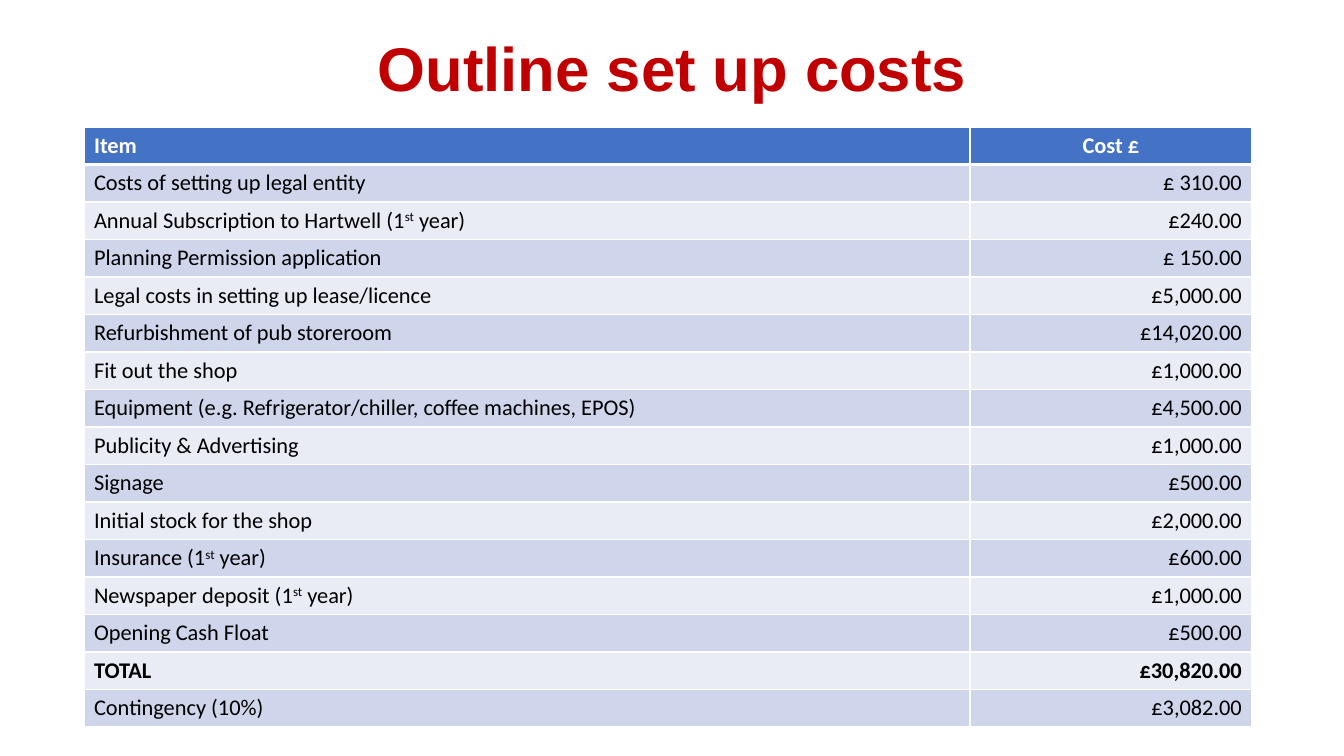
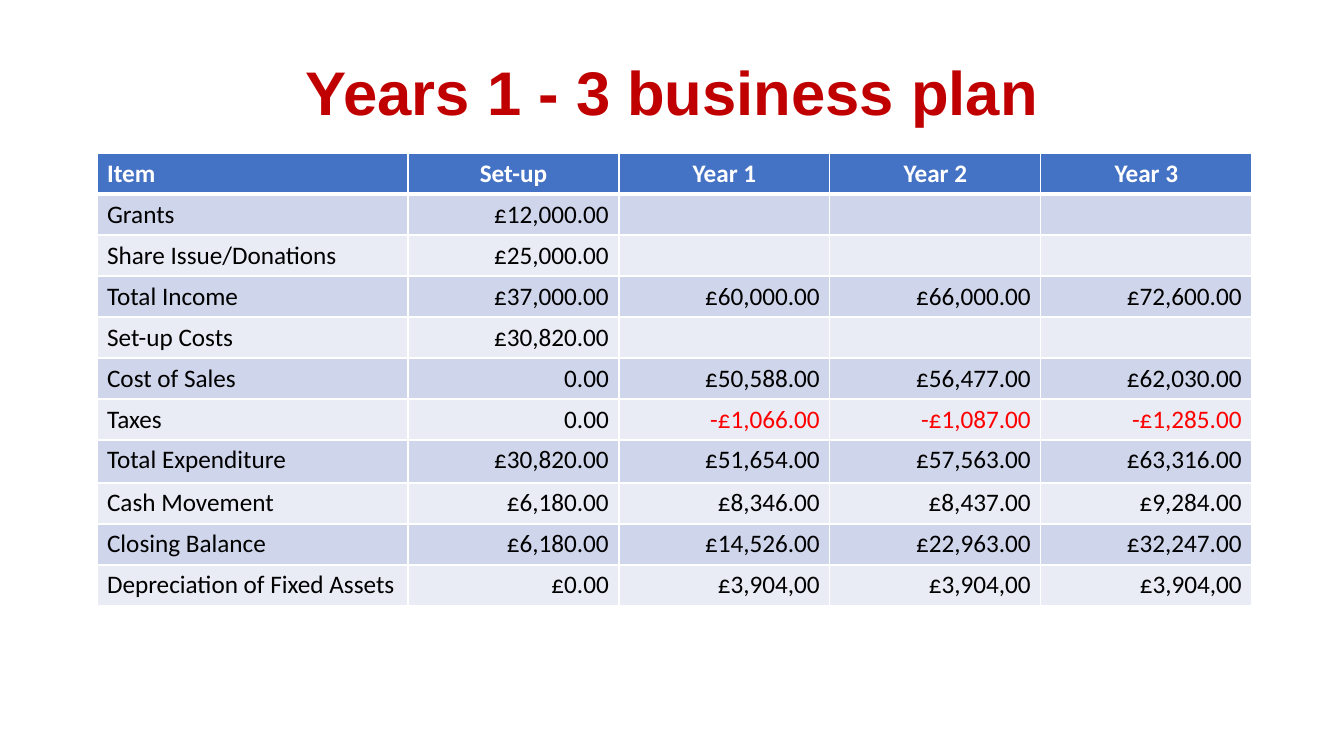
from dataclasses import dataclass

from lxml.etree import SubElement
from pptx import Presentation
from pptx.dml.color import RGBColor
from pptx.enum.text import MSO_ANCHOR as Anchor, MSO_AUTO_SIZE as AutoSize, PP_ALIGN as Align
from pptx.oxml.ns import qn
from pptx.presentation import Presentation as Deck
from pptx.shapes.autoshape import Shape
from pptx.table import _Cell as Cell
from pptx.util import Emu, Pt

PX_PER_INCH = 100.8
SLIDE_SIZE = (1344, 756)
TITLE_LEFT, TITLE_WIDTH, TITLE_HEIGHT = 93, 1159, 111
TITLE_FONT, TABLE_FONT = "Arial", "Calibri"

WHITE = RGBColor(0xFF, 0xFF, 0xFF)
BLACK = RGBColor(0x00, 0x00, 0x00)
TITLE_RED = RGBColor(0xC0, 0x00, 0x00)
NEGATIVE_RED = RGBColor(0xFF, 0x00, 0x00)
HEADER_BLUE = RGBColor(0x44, 0x72, 0xC4)
BANDS = (RGBColor(0xE9, 0xEB, 0xF5), RGBColor(0xCF, 0xD5, 0xEA))

THIN, THICK = Pt(1), Pt(3)
TOTAL_LABEL = "TOTAL"


@dataclass(frozen=True)
class TablePage:
    title: str
    title_top: int
    left: int
    top: int
    columns: tuple[int, ...]
    row_heights: tuple[int, ...]
    text_size: int
    rows: tuple[tuple[str, ...], ...]


SETUP_COSTS = TablePage(
    title="Outline set up costs",
    title_top=16,
    left=84,
    top=127,
    columns=(886, 282),
    row_heights=(37,) * 16,
    text_size=16,
    rows=(
        ("Item", "Cost £"),
        ("Costs of setting up legal entity", "£ 310.00"),
        ("Annual Subscription to Hartwell (1^st^ year)", "£240.00"),
        ("Planning Permission application", "£ 150.00"),
        ("Legal costs in setting up lease/licence", "£5,000.00"),
        ("Refurbishment of pub storeroom", "£14,020.00"),
        ("Fit out the shop", "£1,000.00"),
        ("Equipment (e.g. Refrigerator/chiller, coffee machines, EPOS)", "£4,500.00"),
        ("Publicity & Advertising", "£1,000.00"),
        ("Signage", "£500.00"),
        ("Initial stock for the shop", "£2,000.00"),
        ("Insurance (1^st^ year)", "£600.00"),
        ("Newspaper deposit (1^st^ year)", "£1,000.00"),
        ("Opening Cash Float", "£500.00"),
        (TOTAL_LABEL, "£30,820.00"),
        ("Contingency (10%)", "£3,082.00"),
    ),
)

BUSINESS_PLAN = TablePage(
    title="Years 1 - 3 business plan",
    title_top=40,
    left=97,
    top=153,
    columns=(311,) + (211,) * 4,
    row_heights=(41,) * 7 + (43,) + (41,) * 3,
    text_size=18,
    rows=(
        ("Item", "Set-up", "Year 1", "Year 2", "Year 3"),
        ("Grants", "£12,000.00", "", "", ""),
        ("Share Issue/Donations", "£25,000.00", "", "", ""),
        ("Total Income", "£37,000.00", "£60,000.00", "£66,000.00", "£72,600.00"),
        ("Set-up Costs", "£30,820.00", "", "", ""),
        ("Cost of Sales", "0.00", "£50,588.00", "£56,477.00", "£62,030.00"),
        ("Taxes", "0.00", "-£1,066.00", "-£1,087.00", "-£1,285.00"),
        ("Total Expenditure", "£30,820.00", "£51,654.00", "£57,563.00", "£63,316.00"),
        ("Cash Movement", "£6,180.00", "£8,346.00", "£8,437.00", "£9,284.00"),
        ("Closing Balance", "£6,180.00", "£14,526.00", "£22,963.00", "£32,247.00"),
        ("Depreciation of Fixed Assets", "£0.00", "£3,904,00", "£3,904,00", "£3,904,00"),
    ),
)


def px(length: int) -> Emu:
    return Emu(round(length * 914400 / PX_PER_INCH))


def format_title(title: Shape, text: str, top: int) -> None:
    title.left, title.top = px(TITLE_LEFT), px(top)
    title.width, title.height = px(TITLE_WIDTH), px(TITLE_HEIGHT)
    frame = title.text_frame
    frame.text = text
    frame.word_wrap = True
    frame.auto_size = AutoSize.NONE
    frame.vertical_anchor = Anchor.MIDDLE
    para = frame.paragraphs[0]
    para.alignment = Align.CENTER
    para.line_spacing = 0.9
    font = para.runs[0].font
    font.name, font.size, font.bold = TITLE_FONT, Pt(44), True
    font.color.rgb = TITLE_RED


def set_borders(cell: Cell, top: Pt, bottom: Pt) -> None:
    properties = cell._tc.get_or_add_tcPr()
    widths = {"a:lnL": THIN, "a:lnR": THIN, "a:lnT": top, "a:lnB": bottom}
    for position, (side, width) in enumerate(widths.items()):
        line = SubElement(properties, qn(side), w=str(width))
        fill = SubElement(line, qn("a:solidFill"))
        SubElement(fill, qn("a:srgbClr"), val=str(WHITE))
        properties.insert(position, line)


def write_cell(cell: Cell, text: str, size: int, color: RGBColor, bold: bool, align: Align) -> None:
    """Write the text, raising the parts between carets."""
    para = cell.text_frame.paragraphs[0]
    para.alignment = align
    para.font.size = Pt(size)
    for index, part in enumerate(text.split("^") if text else ()):
        span = para.add_run()
        span.text = part
        font = span.font
        font.name, font.size, font.bold = TABLE_FONT, Pt(size), bold
        font.color.rgb = color
        if index % 2:
            span._r.get_or_add_rPr().set("baseline", "30000")


def format_cell(cell: Cell, text: str, row: int, column: int, is_total: bool, size: int) -> None:
    is_header = row == 0
    cell.fill.solid()
    cell.fill.fore_color.rgb = HEADER_BLUE if is_header else BANDS[row % 2]
    set_borders(cell, THICK if row == 1 else THIN, THICK if is_header else THIN)
    if is_header:
        color = WHITE
    else:
        color = NEGATIVE_RED if text.startswith("-") else BLACK
    if column == 0:
        align = Align.LEFT
    else:
        align = Align.CENTER if is_header else Align.RIGHT
    write_cell(cell, text, size, color, is_header or is_total, align)


def add_table_page(deck: Deck, page: TablePage) -> None:
    slide = deck.slides.add_slide(deck.slide_layouts[5])
    format_title(slide.shapes.title, page.title, page.title_top)
    table = slide.shapes.add_table(
        len(page.rows), len(page.columns), px(page.left), px(page.top),
        px(sum(page.columns)), px(sum(page.row_heights)),
    ).table
    for column, width in zip(table.columns, page.columns):
        column.width = px(width)
    for row, height in zip(table.rows, page.row_heights):
        row.height = px(height)
    for row_index, texts in enumerate(page.rows):
        is_total = texts[0] == TOTAL_LABEL
        for column_index, text in enumerate(texts):
            cell = table.cell(row_index, column_index)
            format_cell(cell, text, row_index, column_index, is_total, page.text_size)


def main() -> None:
    deck = Presentation()
    deck.slide_width, deck.slide_height = map(px, SLIDE_SIZE)
    for page in (SETUP_COSTS, BUSINESS_PLAN):
        add_table_page(deck, page)
    deck.save("out.pptx")


if __name__ == "__main__":
    main()
